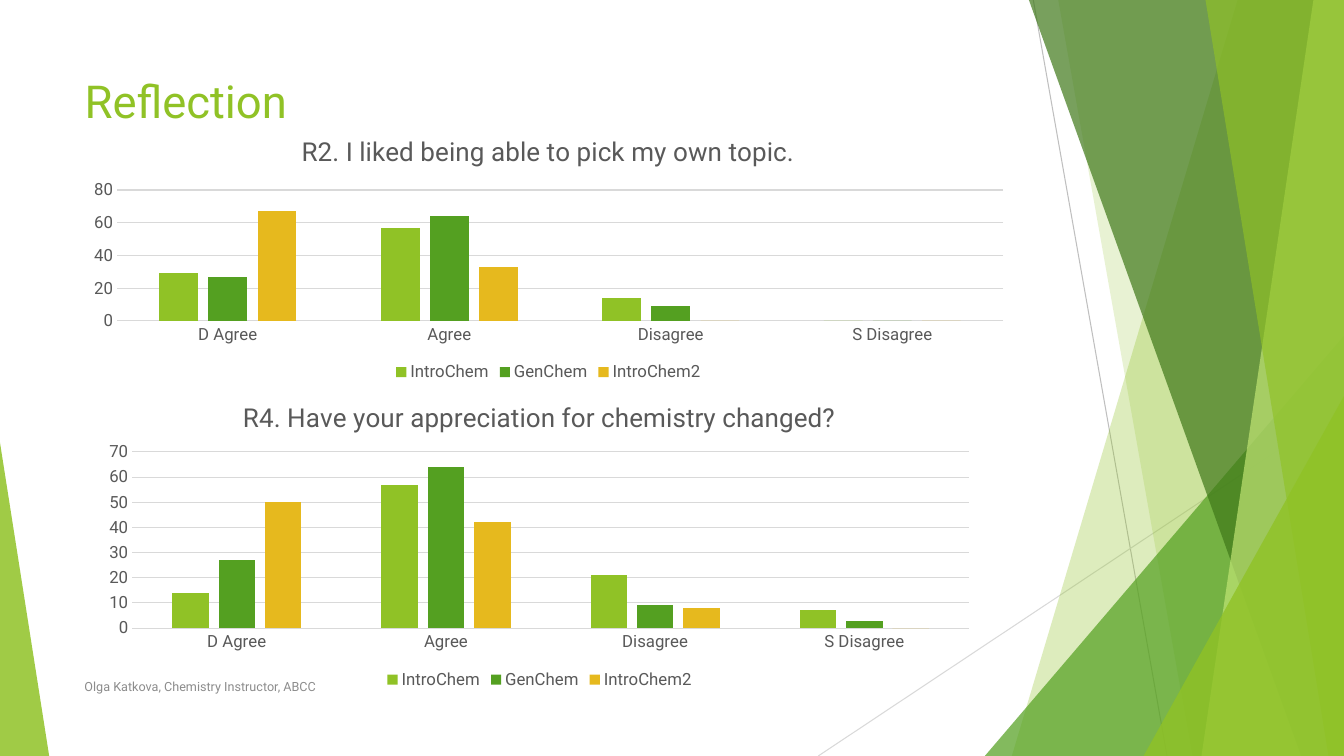
from lxml import etree
from pptx import Presentation
from pptx import util as u
from pptx.chart.data import CategoryChartData
from pptx.dml.color import RGBColor
from pptx.enum import chart as ch, shapes, text
from pptx.oxml import parse_xml
from pptx.oxml.ns import nsdecls, qn

FONT = "Roboto"
WIDE, HIGH = 33.87, 19.05
COLORS = {
    "lime": "90C226", "green": "54A021", "gold": "E6B91E", "forest": "3F7819",
    "pale": "C0E474", "ink": "595959", "note": "8C8C8C", "grid": "D9D9D9", "rule": "BFBFBF",
}
RULES = [((26.04, 0), (29.41, HIGH), "rule"), ((WIDE, 10.24), (20.62, HIGH), "grid")]
DECOR = [
    ("band", (31.19, 25.5), "lime", 30),
    ("band", (26.67, 30.05), "lime", 20),
    ("peak", (24.82, 8.46, 9.05, 1), "green", 72),
    ("band", (25.93, 32.79), "forest", 70),
    ("band", (33.1, 30.28), "pale", 70),
    ("band", (30.38, 33.48), "lime", 65),
    ("peak", (28.82, 9.98, 5.05, 1), "lime", 80),
    ("peak", (0, 11.15, 1.24, 0), "lime", 85),
]
TITLE = ("Reflection", (1.88, 1.7, 23.88, 1.68))
FOOTER = ("Olga Katkova, Chemistry Instructor, ABCC", (1.88, 16.79, 17.5, 1.02))
CATS = ["D Agree", "Agree", "Disagree", "S Disagree"]
SERIES = [("IntroChem", "lime"), ("GenChem", "green"), ("IntroChem2", "gold")]
CHARTS = [
    {
        "title": "R2. I liked being able to pick my own topic.",
        "box": (1.88, 3, 23.88, 6.73), "plot": (2.95, 4.79, 22.33, 3.3),
        "top": 80, "step": 20,
        "vals": [(29, 57, 14, 0), (27, 64, 9, 0), (67, 33, 0, 0)],
    },
    {
        "title": "R4. Have your appreciation for chemistry changed?",
        "box": (2.31, 9.68, 22.58, 7.8), "plot": (3.33, 11.39, 21.09, 4.44),
        "top": 70, "step": 10,
        "vals": [(14, 57, 21, 7), (27, 64, 9, 3), (50, 42, 8, 0)],
    },
]


def cm(nums):
    return [u.Cm(n) for n in nums]


def rgb(name):
    return RGBColor.from_string(COLORS[name])


def style(font, size, color):
    font.name, font.size, font.bold = FONT, u.Pt(size), False
    font.color.rgb = rgb(color)


def stroke(line, color):
    line.color.rgb = rgb(color)
    line.width = u.Pt(0.75)


def add_rule(slide, start, end, color):
    rule = slide.shapes.add_connector(shapes.MSO_CONNECTOR.STRAIGHT, *cm(start + end))
    stroke(rule.line, color)
    etree.SubElement(rule._element.spPr, qn("a:effectLst"))


def add_decor(slide, kind, spec_nums, color, alpha):
    if kind == "band":
        top, foot = spec_nums
        pen = slide.shapes.build_freeform(u.Cm(top), 0)
        pen.add_line_segments([cm(p) for p in ((WIDE, 0), (WIDE, HIGH), (foot, HIGH))])
        shape = pen.convert_to_shape()
    else:
        left, top, width, apex = spec_nums
        shape = slide.shapes.add_shape(
            shapes.MSO_SHAPE.ISOSCELES_TRIANGLE, *cm((left, top, width, HIGH - top)))
        shape.adjustments[0] = apex
    shape.shadow.inherit = False
    shape.line.fill.background()
    shape.fill.solid()
    shape.fill.fore_color.rgb = rgb(color)
    tint = shape._element.spPr.find(".//" + qn("a:srgbClr"))
    etree.SubElement(tint, qn("a:alpha")).set("val", str(alpha * 1000))


def fill_text(shape, words, box, size, color):
    shape.left, shape.top, shape.width, shape.height = cm(box)
    frame = shape.text_frame
    frame.text = words
    frame.word_wrap = True
    frame.auto_size = text.MSO_AUTO_SIZE.NONE
    frame.vertical_anchor = text.MSO_ANCHOR.MIDDLE
    para = frame.paragraphs[0]
    para.alignment = text.PP_ALIGN.LEFT
    style(para.runs[0].font, size, color)


def place_plot(chart, box, plot):
    x, y = [(plot[i] - box[i]) / box[i + 2] for i in (0, 1)]
    w, h = [plot[i] / box[i] for i in (2, 3)]
    parts = "".join(f'<c:{k}Mode val="edge"/>' for k in "xy")
    parts += "".join(f'<c:{k} val="{v:.4f}"/>' for k, v in zip("xywh", (x, y, w, h)))
    area = chart._chartSpace.chart.plotArea
    for old in area.findall(qn("c:layout")):
        area.remove(old)
    area.insert(0, parse_xml(
        f'<c:layout {nsdecls("c")}><c:manualLayout><c:layoutTarget val="inner"/>'
        f'{parts}</c:manualLayout></c:layout>'))


def add_bars(slide, item):
    data = CategoryChartData()
    data.categories = CATS
    for (name, _), vals in zip(SERIES, item["vals"]):
        data.add_series(name, vals)
    chart = slide.shapes.add_chart(
        ch.XL_CHART_TYPE.COLUMN_CLUSTERED, *cm(item["box"]), data).chart
    style(chart.font, 12, "ink")
    chart.has_title = True
    head = chart.chart_title
    head.include_in_layout = False
    head.text_frame.text = item["title"]
    style(head.text_frame.paragraphs[0].runs[0].font, 18.6, "ink")
    chart.has_legend = True
    chart.legend.position = ch.XL_LEGEND_POSITION.BOTTOM
    chart.legend.include_in_layout = False
    style(chart.legend.font, 12, "ink")
    cat, val = chart.category_axis, chart.value_axis
    for axis in (cat, val):
        axis.major_tick_mark = axis.minor_tick_mark = ch.XL_TICK_MARK.NONE
        style(axis.tick_labels.font, 12, "ink")
    stroke(cat.format.line, "grid")
    val.format.line.fill.background()
    stroke(val.major_gridlines.format.line, "grid")
    val.minimum_scale, val.maximum_scale = 0, item["top"]
    val.major_unit = item["step"]
    plot = chart.plots[0]
    plot.gap_width, plot.overlap, plot.vary_by_categories = 219, -27, False
    for bars, (_, color) in zip(plot.series, SERIES):
        bars.format.fill.solid()
        bars.format.fill.fore_color.rgb = rgb(color)
    place_plot(chart, item["box"], item["plot"])


def main():
    deck = Presentation()
    deck.slide_width, deck.slide_height = cm((WIDE, HIGH))
    slide = deck.slides.add_slide(deck.slide_layouts[5])
    for rule in RULES:
        add_rule(slide, *rule)
    for piece in DECOR:
        add_decor(slide, *piece)
    fill_text(slide.shapes.title, *TITLE, 32.4, "lime")
    add_bars(slide, CHARTS[0])
    note = slide.shapes.add_textbox(*cm(FOOTER[1]))
    fill_text(note, *FOOTER, 9, "note")
    add_bars(slide, CHARTS[1])
    deck.save("out.pptx")


if __name__ == "__main__":
    main()
